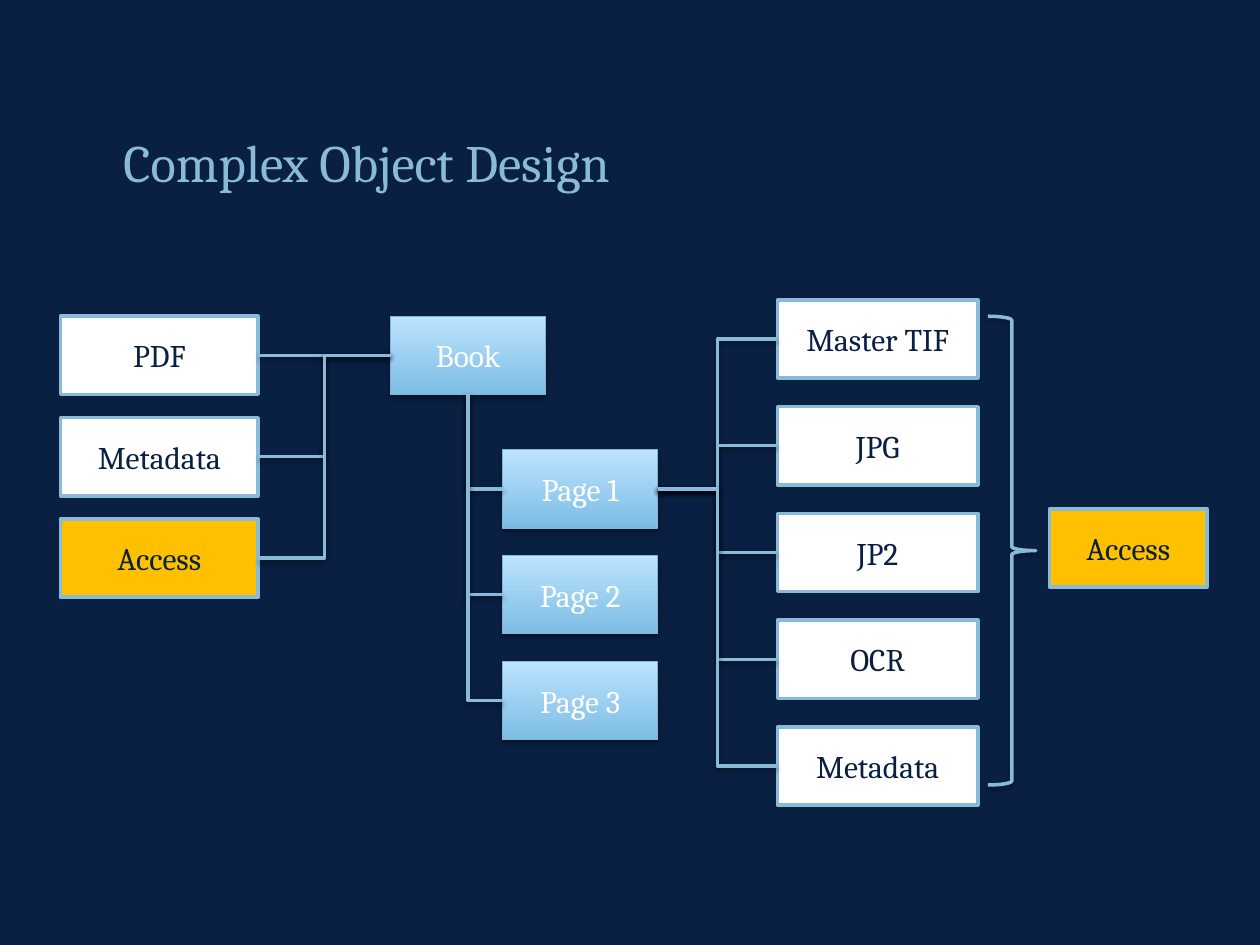
from dataclasses import dataclass

from lxml.etree import SubElement
from pptx import Presentation
from pptx.dml.color import RGBColor
from pptx.enum.shapes import MSO_CONNECTOR, MSO_SHAPE
from pptx.enum.text import MSO_ANCHOR, MSO_AUTO_SIZE, PP_ALIGN
from pptx.oxml.ns import qn
from pptx.util import Inches, Pt

SLIDE_WIDTH, SLIDE_HEIGHT = Inches(10), Inches(7.5)
COLUMN, ROW = SLIDE_WIDTH / 100, SLIDE_HEIGHT / 75
NODE_ROWS = 6.2
BOTTOM, LEFT, RIGHT = 2, 1, 3


@dataclass(frozen=True)
class Theme:
    background: str = "0A2043"
    accent: str = "89BAD7"
    paper: str = "FFFFFF"
    access: str = "FFC000"
    gradient: tuple = ("7DBDE3", "BCE3FF")
    gradient_line: str = "84B6D4"
    font: str = "Cambria"
    title_size: float = 30
    node_size: float = 18
    line_width: float = 2
    thin_line: float = 0.75


@dataclass(frozen=True)
class Box:
    column: float
    row: float
    columns: float
    rows: float

    def emu(self):
        return (round(self.column * COLUMN), round(self.row * ROW),
                round(self.columns * COLUMN), round(self.rows * ROW))

    def stack(self, count):
        pitch = (self.rows - NODE_ROWS) / max(count - 1, 1)
        return [Box(self.column, self.row + index * pitch, self.columns, NODE_ROWS)
                for index in range(count)]


THEME = Theme()


def color(value):
    return RGBColor.from_string(value)


def style_text(paragraph, size, value):
    for run in paragraph.runs:
        run.font.name = THEME.font
        run.font.size = Pt(size)
        run.font.color.rgb = color(value)


def style_line(shape, value=THEME.accent, width=THEME.line_width):
    shape.line.color.rgb = color(value)
    shape.line.width = Pt(width)


def add_shadow(shape, distance, opacity):
    effects = SubElement(shape._element.spPr, qn("a:effectLst"))
    shadow = SubElement(effects, qn("a:outerShdw"), blurRad=str(Pt(3.1)),
                        dist=str(Pt(distance)), dir="5400000", rotWithShape="0")
    shade = SubElement(shadow, qn("a:srgbClr"), val="000000")
    SubElement(shade, qn("a:alpha"), val=str(opacity * 1000))


def add_node(slide, box, label, fill=None):
    shape = slide.shapes.add_shape(MSO_SHAPE.RECTANGLE, *box.emu())
    if fill:
        shape.fill.solid()
        shape.fill.fore_color.rgb = color(fill)
        style_line(shape)
        shape.shadow.inherit = False
    else:
        shape.fill.gradient()
        shape.fill.gradient_angle = 90
        for stop, value in zip(shape.fill.gradient_stops, THEME.gradient):
            stop.color.rgb = color(value)
        style_line(shape, THEME.gradient_line, THEME.thin_line)
        add_shadow(shape, 1.8, 35)
    frame = shape.text_frame
    frame.text = label
    frame.vertical_anchor = MSO_ANCHOR.MIDDLE
    paragraph = frame.paragraphs[0]
    paragraph.alignment = PP_ALIGN.CENTER
    style_text(paragraph, THEME.node_size, THEME.background if fill else THEME.paper)
    return shape


def join(slide, start, start_side, end, end_side):
    connector = slide.shapes.add_connector(MSO_CONNECTOR.ELBOW, 0, 0, 0, 0)
    connector.begin_connect(start, start_side)
    connector.end_connect(end, end_side)
    style_line(connector)
    add_shadow(connector, 1.6, 38)
    return connector


def make_single_bend(connector):
    left, top = connector.left, connector.top
    width, height = connector.width, connector.height
    connector.left = left + (width - height) // 2
    connector.top = top + (height - width) // 2
    connector.width, connector.height = height, width
    properties = connector._element.spPr
    transform = properties.find(qn("a:xfrm"))
    transform.set("rot", "16200000")
    transform.set("flipH", "1")
    properties.find(qn("a:prstGeom")).set("prst", "bentConnector2")


def add_title(slide, box, text):
    title = slide.shapes.title
    title.left, title.top, title.width, title.height = box.emu()
    frame = title.text_frame
    frame.text = text
    frame.word_wrap = True
    frame.auto_size = MSO_AUTO_SIZE.NONE
    frame.vertical_anchor = MSO_ANCHOR.TOP
    paragraph = frame.paragraphs[0]
    paragraph.alignment = PP_ALIGN.LEFT
    paragraph.line_spacing = 1.2
    style_text(paragraph, THEME.title_size, THEME.accent)


def add_pages(slide, box, book, labels):
    pages = [add_node(slide, cell, label)
             for cell, label in zip(box.stack(len(labels)), labels)]
    for page in pages:
        make_single_bend(join(slide, book, BOTTOM, page, LEFT))
    return pages


def add_book_parts(slide, box, book, parts):
    for cell, (label, fill) in zip(box.stack(len(parts)), parts):
        join(slide, add_node(slide, cell, label, fill), RIGHT, book, LEFT)


def add_page_files(slide, box, page, labels):
    for cell, label in zip(box.stack(len(labels)), labels):
        join(slide, page, RIGHT, add_node(slide, cell, label, THEME.paper), LEFT)


def add_access_group(slide, box, label):
    brace_box = Box(box.column, box.row, 3.8, box.rows)
    brace = slide.shapes.add_shape(MSO_SHAPE.RIGHT_BRACE, *brace_box.emu())
    brace.fill.background()
    style_line(brace)
    add_shadow(brace, 1.6, 38)
    node_columns = 12.5
    node_box = Box(box.column + box.columns - node_columns,
                   box.row + (box.rows - NODE_ROWS) / 2 - 0.2, node_columns, NODE_ROWS)
    add_node(slide, node_box, label, THEME.access)


def main():
    presentation = Presentation()
    presentation.slide_width, presentation.slide_height = SLIDE_WIDTH, SLIDE_HEIGHT
    slide = presentation.slides.add_slide(presentation.slide_layouts[5])
    slide.background.fill.solid()
    slide.background.fill.fore_color.rgb = color(THEME.background)

    add_title(slide, Box(8.8, 8.8, 82.5, 7.1), "Complex Object Design")
    book = add_node(slide, Box(31, 25.1, 12.3, NODE_ROWS), "Book")
    pages = add_pages(slide, Box(39.9, 35.7, 12.3, 23), book,
                      ["Page 1", "Page 2", "Page 3"])
    add_page_files(slide, Box(61.7, 23.8, 15.9, 40.1), pages[0],
                   ["Master TIF", "JPG", "JP2", "OCR", "Metadata"])
    add_book_parts(slide, Box(4.8, 25.1, 15.7, 22.3), book,
                   [("PDF", THEME.paper), ("Metadata", THEME.paper),
                    ("Access", THEME.access)])
    add_access_group(slide, Box(78.4, 25.1, 17.4, 37.2), "Access")
    presentation.save("out.pptx")


if __name__ == "__main__":
    main()
